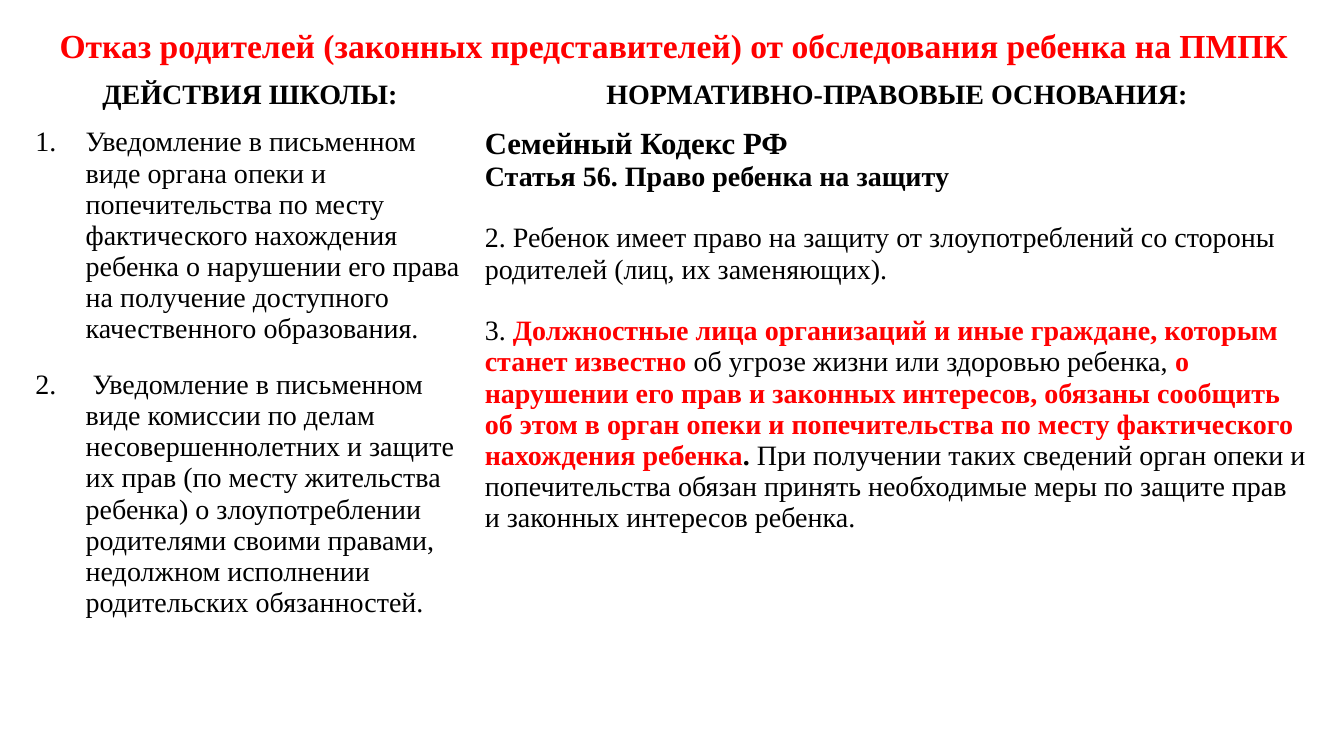
import pptx
import pptx.dml.color
import pptx.enum.text
import pptx.util
from pptx.oxml.ns import qn

Pt = pptx.util.Pt
Align = pptx.enum.text.PP_ALIGN

# Content
COLORS = {"black": "000000", "red": "FF0000"}
FONT = "Times New Roman"
TITLE = "Отказ родителей (законных представителей) от обследования ребенка на ПМПК"
HEADINGS = ["ДЕЙСТВИЯ ШКОЛЫ:", "НОРМАТИВНО-ПРАВОВЫЕ ОСНОВАНИЯ:"]
ACTIONS = [
    "Уведомление в письменном виде органа опеки и попечительства по месту "
    "фактического нахождения ребенка о нарушении его права на получение "
    "доступного качественного образования.",
    " Уведомление в письменном виде комиссии по делам несовершеннолетних и "
    "защите их прав (по месту жительства ребенка) о злоупотреблении родителями "
    "своими правами, недолжном исполнении родительских обязанностей.",
]
# Each paragraph: size, space before, runs of (text, bold, colour)
LAW = [
    (22, 0, [("Семейный Кодекс РФ", True, "black")]),
    (20, 0, [("Статья 56.\N{NO-BREAK SPACE}Право ребенка на защиту", True, "black")]),
    (20, 22, [("2. Ребенок имеет право на защиту от злоупотреблений со стороны "
               "родителей (лиц, их заменяющих).", False, "black")]),
    (20, 22, [
        ("3. ", False, "black"),
        ("Должностные лица организаций и иные граждане, которым станет известно ",
         True, "red"),
        ("об угрозе жизни или здоровью ребенка, ", False, "black"),
        ("о нарушении его прав и законных интересов, обязаны сообщить об этом в "
         "орган опеки и попечительства по месту фактического нахождения ребенка",
         True, "red"),
        (".", True, "black"),
        (" При получении таких сведений орган опеки и попечительства обязан "
         "принять необходимые меры по защите прав и законных интересов ребенка.",
         False, "black"),
    ]),
]

# Layout in points
TITLE_BOX = (20.2, 15.1, 922.3, 38.2)
TABLE_LEFT, TABLE_TOP = 18, 53.3
COLUMNS = [321.1, 603.4]
ROWS = [33.8, 415.4, 29.5]
NUMBER_INDENT = 36
ACTION_GAP = 18


def style(font, size=None, bold=None, color=None):
    font.name = FONT
    if size:
        font.size = Pt(size)
    if bold is not None:
        font.bold = bold
    if color:
        font.color.rgb = pptx.dml.color.RGBColor.from_string(COLORS[color])


def next_paragraph(frame, index):
    return frame.add_paragraph() if index else frame.paragraphs[0]


def number(paragraph):
    props = paragraph._p.get_or_add_pPr()
    props.set("marL", str(Pt(NUMBER_INDENT)))
    props.set("indent", str(-Pt(NUMBER_INDENT)))
    bullet = props.makeelement(qn("a:buAutoNum"), {"type": "arabicPeriod"})
    props.append(bullet)


deck = pptx.Presentation()
deck.slide_width, deck.slide_height = Pt(960), Pt(540)
slide = deck.slides.add_slide(deck.slide_layouts[5])

# Title
title = slide.shapes.title
title.left, title.top, title.width, title.height = map(Pt, TITLE_BOX)
title.text_frame.text = TITLE
title.text_frame.auto_size = pptx.enum.text.MSO_AUTO_SIZE.NONE
title.text_frame.vertical_anchor = pptx.enum.text.MSO_ANCHOR.MIDDLE
heading = title.text_frame.paragraphs[0]
heading.alignment = Align.CENTER
heading.line_spacing = 0.9
style(heading.font, 24, True, "red")

# Table grid
table = slide.shapes.add_table(
    len(ROWS), len(COLUMNS), Pt(TABLE_LEFT), Pt(TABLE_TOP),
    Pt(sum(COLUMNS)), Pt(sum(ROWS))).table
table.horz_banding = False
for column, width in zip(table.columns, COLUMNS):
    column.width = Pt(width)
for row, height in zip(table.rows, ROWS):
    row.height = Pt(height)
for cell in table.iter_cells():
    cell.fill.background()
table.cell(1, 1).merge(table.cell(2, 1))

# Column headings
for index, text in enumerate(HEADINGS):
    cell = table.cell(0, index)
    cell.text = text
    paragraph = cell.text_frame.paragraphs[0]
    paragraph.alignment = Align.CENTER
    style(paragraph.font, 20, True, "black")

# School actions
actions_frame = table.cell(1, 0).text_frame
for index, text in enumerate(ACTIONS):
    paragraph = next_paragraph(actions_frame, index)
    paragraph.text = text
    if index:
        paragraph.space_before = Pt(ACTION_GAP)
    number(paragraph)
    style(paragraph.font, 20, False, "black")

# Legal grounds
law_frame = table.cell(1, 1).text_frame
for index, (size, gap, runs) in enumerate(LAW):
    paragraph = next_paragraph(law_frame, index)
    if gap:
        paragraph.space_before = Pt(gap)
    style(paragraph.font, size)
    for text, bold, color in runs:
        run = paragraph.add_run()
        run.text = text
        style(run.font, size, bold, color)

deck.save("out.pptx")
